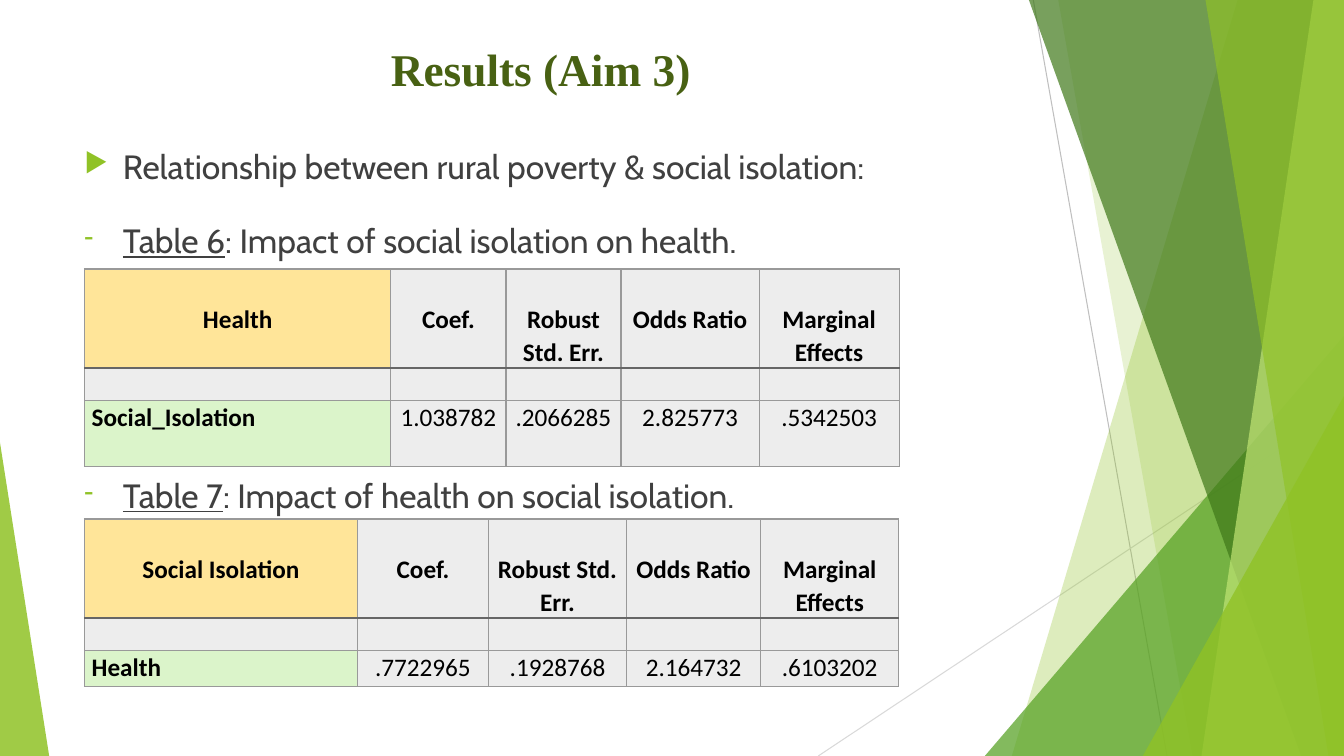
from dataclasses import dataclass

from lxml import etree
from pptx import Presentation
from pptx.dml.color import RGBColor
from pptx.enum import shapes, text
from pptx.oxml import ns
from pptx.util import Cm, Pt


@dataclass(frozen=True)
class Theme:
    lime: str = "90C226"
    leaf: str = "54A021"
    pine: str = "3F7819"
    pale: str = "C0E474"
    olive: str = "486113"
    ink: str = "404040"
    black: str = "000000"
    ray: str = "BFBFBF"
    faint: str = "D9D9D9"
    gold: str = "FFE599"
    mint: str = "DBF4CA"
    gray: str = "EDEDED"
    rule: str = "999999"
    dark: str = "666666"
    head: float = 32.4
    body: float = 24
    cell: float = 18
    serif: str = "Times New Roman"
    sans: str = "Cabin"
    grid: str = "Calibri"


T = Theme()
WIDE, HIGH = 33.87, 19.05
LEFT = 2.13


def add_xml(node, tag, **attrs):
    return etree.SubElement(node, ns.qn(tag), attrs)


def style(run, size, face, color, bold=False):
    font = run.font
    font.size, font.name, font.bold = Pt(size), face, bold
    font.color.rgb = RGBColor.from_string(color)


def tint(shape, color, alpha):
    """Fill a shape without outline; alpha is the opacity in percent."""
    shape.shadow.inherit = False
    shape.fill.solid()
    shape.fill.fore_color.rgb = RGBColor.from_string(color)
    shape.line.fill.background()
    mark = shape.fill._xPr.find(".//" + ns.qn("a:srgbClr"))
    add_xml(mark, "a:alpha", val=str(alpha * 1000))


def add_ray(slide, x1, y1, x2, y2, color):
    line = slide.shapes.add_connector(
        shapes.MSO_CONNECTOR.STRAIGHT, Cm(x1), Cm(y1), Cm(x2), Cm(y2))
    line.line.color.rgb = RGBColor.from_string(color)
    line.line.width = Pt(0.75)
    add_xml(line._element.spPr, "a:effectLst")


def add_pane(slide, top, base, color, alpha):
    """Full-height pane from a slanted left edge to the right slide edge."""
    form = slide.shapes.build_freeform(Cm(top), 0)
    form.add_line_segments(
        [(Cm(WIDE), 0), (Cm(WIDE), Cm(HIGH)), (Cm(base), Cm(HIGH))], close=True)
    tint(form.convert_to_shape(), color, alpha)


def add_wedge(slide, x, y, width, apex, color, alpha):
    """Right triangle standing on the bottom slide edge."""
    wedge = slide.shapes.add_shape(
        shapes.MSO_SHAPE.ISOSCELES_TRIANGLE, Cm(x), Cm(y), Cm(width), Cm(HIGH - y))
    wedge.adjustments[0] = apex
    tint(wedge, color, alpha)


def add_decor(slide):
    add_ray(slide, 26.04, 0, 29.41, HIGH, T.ray)
    add_ray(slide, WIDE, 10.24, 20.62, HIGH, T.faint)
    add_pane(slide, 31.19, 25.5, T.lime, 30)
    add_pane(slide, 26.67, 30.05, T.lime, 20)
    add_wedge(slide, 24.82, 8.46, 9.05, 1, T.leaf, 72)
    add_pane(slide, 25.93, 32.79, T.pine, 70)
    add_pane(slide, 33.1, 30.28, T.pale, 70)
    add_pane(slide, 30.38, 33.48, T.lime, 65)
    add_wedge(slide, 28.8, 9.98, 5.07, 1, T.lime, 80)
    add_wedge(slide, 0, 11.15, 1.24, 0, T.lime, 85)


def add_box(slide, x, y, width, height):
    frame = slide.shapes.add_textbox(Cm(x), Cm(y), Cm(width), Cm(height)).text_frame
    frame.word_wrap = True
    return frame


def add_title(slide, words):
    frame = add_box(slide, 9.6, 0.91, 8.43, 2.16)
    frame.text = words
    style(frame.paragraphs[0].runs[0], T.head, T.serif, T.olive, True)


def add_point(slide, mid, sign, words, label=""):
    """Bulleted line centred on height mid, with an underlined label first."""
    frame = add_box(slide, LEFT, mid - 0.6, 23.5, 1.2)
    frame.margin_left = frame.margin_top = frame.margin_bottom = 0
    frame.vertical_anchor = text.MSO_ANCHOR.MIDDLE
    para = frame.paragraphs[0]
    para.text = label or words
    if label:
        para.runs[0].font.underline = True
        para.add_run().text = words
    for run in para.runs:
        style(run, T.body, T.sans, T.ink)
    props = para._p.get_or_add_pPr()
    props.set("marL", str(Cm(0.97)))
    props.set("indent", str(-Cm(0.97)))
    add_xml(add_xml(props, "a:buClr"), "a:srgbClr", val=T.lime)
    add_xml(props, "a:buSzPct", val="80000")
    add_xml(props, "a:buChar", char=sign)


def set_edges(cell, top, base):
    props = cell._tc.get_or_add_tcPr()
    edges = (("a:lnL", T.rule), ("a:lnR", T.rule), ("a:lnT", top), ("a:lnB", base))
    for spot, (tag, color) in enumerate(edges):
        width = Pt(1.5 if color == T.dark else 1)
        edge = add_xml(props, tag, w=str(width))
        add_xml(add_xml(edge, "a:solidFill"), "a:srgbClr", val=color)
        props.insert(spot, edge)


def fill_cell(cell, words, row, col):
    cell.margin_left = cell.margin_right = Cm(0.18)
    cell.margin_top = Cm(0 if row else 0.83)
    cell.margin_bottom = 0
    cell.fill.solid()
    color = {(0, 0): T.gold, (2, 0): T.mint}.get((row, col), T.gray)
    cell.fill.fore_color.rgb = RGBColor.from_string(color)
    set_edges(cell, T.dark if row == 1 else T.rule, T.rule if row else T.dark)
    para = cell.text_frame.paragraphs[0]
    para.font.size = Pt(T.cell)
    if words:
        para.text = words
        para.line_spacing = 1.07
        if row == 0 or col:
            para.alignment = text.PP_ALIGN.CENTER
        style(para.runs[0], T.cell, T.grid, T.black, row == 0 or col == 0)


def add_grid(slide, y, widths, heights, rows):
    table = slide.shapes.add_table(
        len(rows), len(widths), Cm(LEFT), Cm(y),
        Cm(sum(widths)), Cm(sum(heights))).table
    table.first_row = table.horz_banding = False
    for col, width in zip(table.columns, widths):
        col.width = Cm(width)
    for row, height in zip(table.rows, heights):
        row.height = Cm(height)
    for r, row in enumerate(rows):
        for c, words in enumerate(row):
            fill_cell(table.cell(r, c), words, r, c)


def main():
    deck = Presentation()
    deck.slide_width, deck.slide_height = Cm(WIDE), Cm(HIGH)
    slide = deck.slides.add_slide(deck.slide_layouts[6])
    heads = ["Coef.", "Robust Std. Err.", "Odds Ratio", "Marginal Effects"]
    blank = [""] * 5

    add_decor(slide)
    add_title(slide, "Results (Aim 3)")
    add_point(slide, 4.18, "▶", "Relationship between rural poverty & social isolation:")
    add_point(slide, 6.05, "-", ": Impact of social isolation on health.", "Table 6")
    add_point(slide, 12.47, "-", ": Impact of health on social isolation.", "Table 7")
    add_grid(slide, 6.78, [7.72, 2.9, 2.9, 3.48, 3.53], [2.5, 0.82, 1.66], [
        ["Health"] + heads,
        blank,
        ["Social_Isolation", "1.038782", ".2066285", "2.825773", ".5342503"],
    ])
    add_grid(slide, 13.08, [6.88, 3.3, 3.48, 3.38, 3.48], [2.5, 0.82, 0.89], [
        ["Social Isolation"] + heads,
        blank,
        ["Health", ".7722965", ".1928768", "2.164732", ".6103202"],
    ])
    deck.save("out.pptx")


if __name__ == "__main__":
    main()
